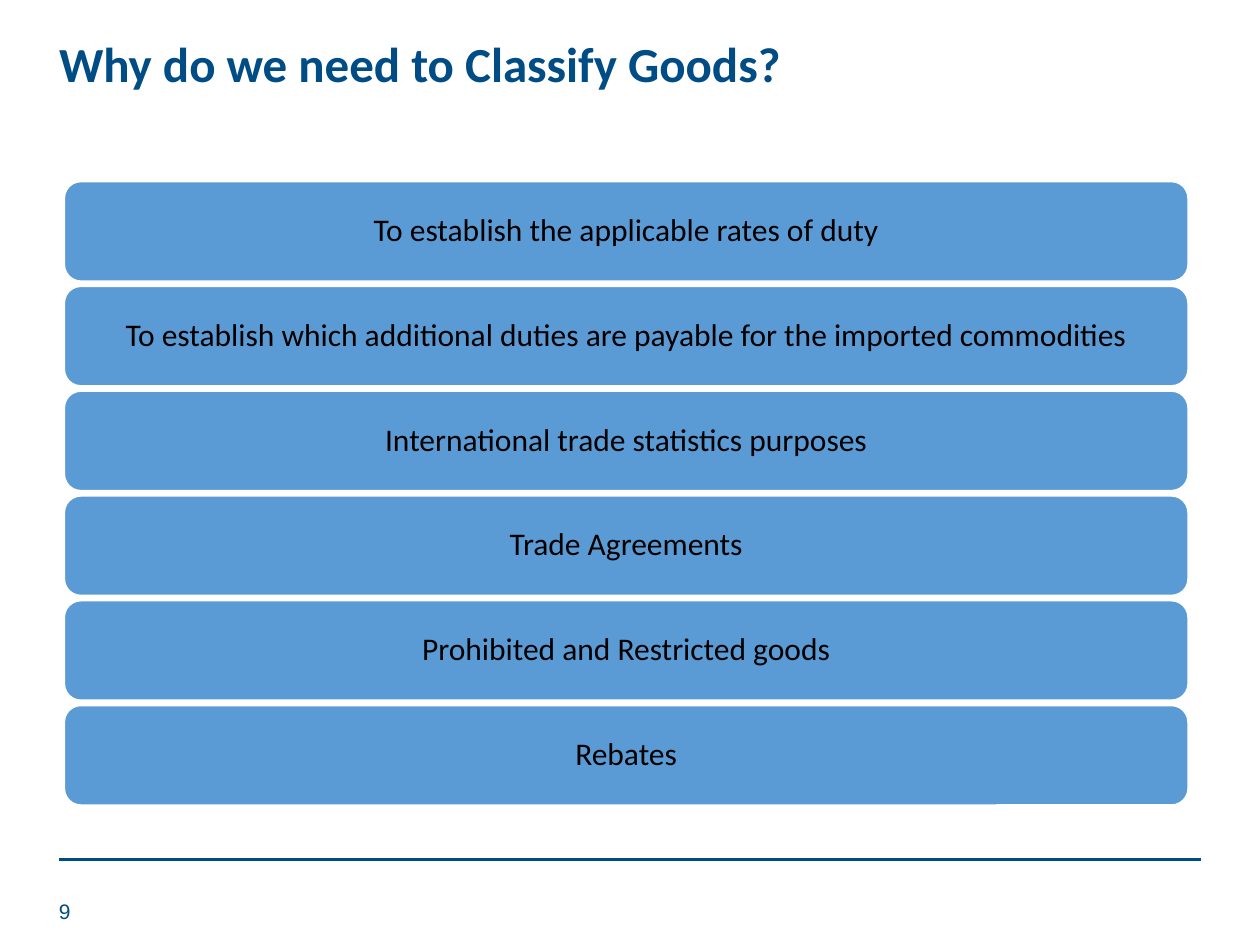
import pptx
import pptx.util
import pptx.dml.color
import pptx.enum.shapes
import pptx.enum.text
from pptx.util import Inches

COLORS = {"navy": "004C85", "bar": "5B9BD5", "white": "FFFFFF", "black": "000000"}
REASONS = [
    "To establish the applicable rates of duty",
    "To establish which additional duties are payable for the imported commodities",
    "International trade statistics purposes",
    "Trade Agreements",
    "Prohibited and Restricted goods",
    "Rebates",
]


def rgb(name):
    """Return the named colour."""
    return pptx.dml.color.RGBColor.from_string(COLORS[name])


def set_text(sp, text, size, font, color, bold=False, spacing=None, middle=True):
    """Write one formatted paragraph into a shape and return it."""
    tf = sp.text_frame
    tf.text = text
    tf.word_wrap = True
    anchor = pptx.enum.text.MSO_ANCHOR
    tf.vertical_anchor = anchor.MIDDLE if middle else anchor.TOP
    p = tf.paragraphs[0]
    p.line_spacing = spacing
    r = p.runs[0]
    r.font.name = font
    r.font.size = pptx.util.Pt(size)
    r.font.bold = bold
    r.font.color.rgb = rgb(color)
    return p


def add_title(s, text, left, top, width, height):
    """Place the slide title in its box."""
    sp = s.shapes.add_textbox(left, top, width, height)
    set_text(sp, text, 28, "Calibri", "navy", bold=True, spacing=0.9, middle=False)


def add_reasons(s, reasons, left, top, width, height, gap=Inches(0.04)):
    """Stack one rounded bar per reason, evenly filling the box."""
    pitch = (height + gap) / len(reasons)
    for i, reason in enumerate(reasons):
        sp = s.shapes.add_shape(
            pptx.enum.shapes.MSO_SHAPE.ROUNDED_RECTANGLE,
            left, int(top + i * pitch), width, int(pitch - gap))
        sp.shadow.inherit = False
        sp.fill.solid()
        sp.fill.fore_color.rgb = rgb("bar")
        sp.line.color.rgb = rgb("white")
        sp.line.width = pptx.util.Pt(1)
        tf = sp.text_frame
        tf.margin_left = tf.margin_right = Inches(0.07)
        tf.margin_top = tf.margin_bottom = Inches(0.04)
        p = set_text(sp, reason, 18, "Calibri", "black", spacing=0.9)
        p.alignment = pptx.enum.text.PP_ALIGN.CENTER


def add_footer(s, number, left, top, width, height):
    """Draw the rule on the top edge and the slide number at the bottom left."""
    rule = s.shapes.add_connector(
        pptx.enum.shapes.MSO_CONNECTOR.STRAIGHT, left, top, left + width, top)
    rule.line.color.rgb = rgb("navy")
    rule.line.width = pptx.util.Pt(2)
    rule._element.spPr.append(pptx.oxml.xmlchemy.OxmlElement("a:effectLst"))
    box_height = Inches(0.4)
    sp = s.shapes.add_textbox(
        left - Inches(0.1), top + height - box_height, Inches(0.46), box_height)
    set_text(sp, number, 12, "Arial", "navy")


def main():
    """Build and save the slide."""
    prs = pptx.Presentation()
    prs.slide_width, prs.slide_height = Inches(10), Inches(7.5)
    s = prs.slides.add_slide(prs.slide_layouts[6])
    add_footer(s, "9", Inches(0.47), Inches(6.82), Inches(9.06), Inches(0.61))
    add_title(s, "Why do we need to Classify Goods?",
              Inches(0.37), Inches(0.27), Inches(8.62), Inches(0.58))
    add_reasons(s, REASONS, Inches(0.51), Inches(1.44), Inches(8.92), Inches(4.95))
    prs.save("out.pptx")


if __name__ == "__main__":
    main()
